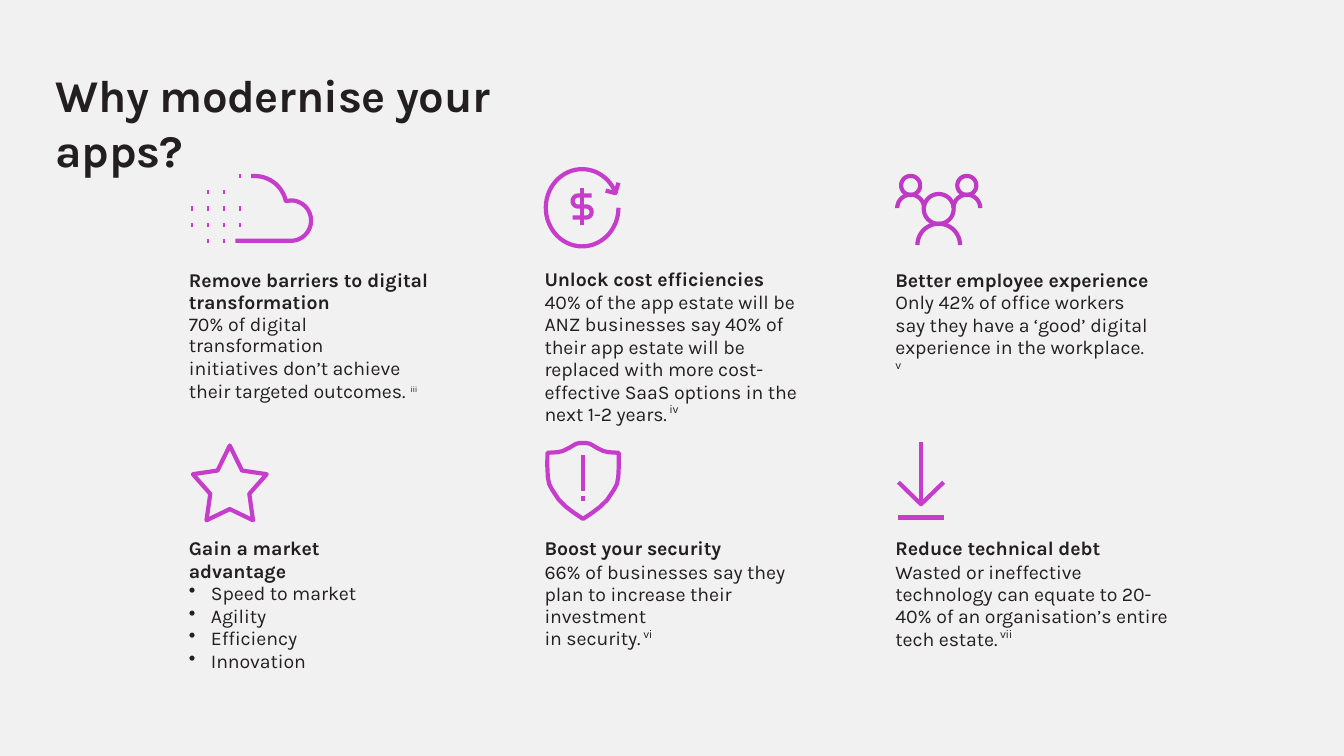
"""Build the slide on reasons to modernise apps."""
from dataclasses import dataclass
from math import cos, radians, sin

from lxml import etree
from pptx import Presentation
from pptx import util as u
from pptx.dml.color import RGBColor
from pptx.enum import shapes, text
from pptx.oxml import ns

Point = tuple[float, float]
Stroke = list[Point]


@dataclass(frozen=True)
class Theme:
    font: str = "Karla"
    ink: str = "231F20"
    paper: str = "F1F1F1"
    accent: str = "C63DCC"
    accent_deep: str = "BF3AC4"
    title_size: float = 53.5
    text_size: float = 23
    stroke: float = 4.95


@dataclass(frozen=True)
class Line:
    text: str
    leading: float = 26.4
    before: float = 0
    bold: bool = False
    bullet: bool = False
    note: str = ""
    note_size: float = 24


@dataclass(frozen=True)
class Card:
    column: int
    row: int
    width: float
    height: float
    lines: list[Line]
    inset: float = 0.7


@dataclass(frozen=True)
class Icon:
    strokes: list[Stroke]
    color: str
    closed: bool = False


THEME = Theme()
COLUMNS = (222.5, 641.5, 1054.8)
ROWS = (313.9, 631.4)
BULLET_INDENT = 26


def heading(words: str) -> Line:
    """Return a standard card heading."""
    return Line(words, 27, 1.1, bold=True)


CARDS = [
    Card(0, 0, 288.7, 135.4, [
        Line("Remove barriers to digital transformation", before=3, bold=True),
        Line("70% of digital transformation", 25.1),
        Line("initiatives don’t achieve their targeted outcomes. ", before=1.2, note="iii", note_size=18),
    ], inset=2.9),
    Card(1, 0, 321.9, 162, [
        heading("Unlock cost efficiencies"),
        Line("40% of the app estate will be ANZ businesses say 40% of their app estate will be replaced "
             "with more cost-effective SaaS options in the next 1-2 years.", before=1.3, note=" iv"),
    ]),
    Card(2, 0, 301, 108.7, [
        Line("Better employee experience", before=3, bold=True),
        Line("Only 42% of office workers say they have a ‘good’ digital experience in the workplace. ", note="v"),
    ], inset=2.9),
    Card(0, 1, 268.6, 135.4, [
        heading("Gain a market advantage"),
        *(Line(gain, bullet=True) for gain in ("Speed to market", "Agility", "Efficiency")),
        Line("Innovation", 27, bullet=True),
    ]),
    Card(1, 1, 311.8, 108.7, [
        heading("Boost your security"),
        Line("66% of businesses say they plan to increase their investment", before=1.3),
        Line("in security.", 25.7, note=" vi"),
    ]),
    Card(2, 1, 334.8, 108, [
        heading("Reduce technical debt"),
        Line("Wasted or ineffective technology can equate to 20-40% of an organisation’s entire tech estate.",
             before=1.3, note=" vii"),
    ]),
]


def arc(x: float, y: float, rx: float, ry: float, start: float, end: float) -> Stroke:
    """Return points along an elliptical arc, with angles running clockwise."""
    steps = max(12, round(abs(end - start) / 6))
    angles = [radians(start + (end - start) * i / steps) for i in range(steps + 1)]
    return [(x + rx * cos(a), y + ry * sin(a)) for a in angles]


def mirrored(axis: float, half: Stroke) -> Stroke:
    """Return a symmetric outline from the half to the right of its axis."""
    right = [(axis + x, y) for x, y in half]
    return right + [(axis - x, y) for x, y in half[-2:0:-1]]


CLOUD = [(277.2, 283.7), *arc(342.7, 259.9, 23.8, 23.8, 90, -90), (337.7, 236.9),
         *arc(300.2, 244.8, 37.4, 37.4, -12, -90), (295.9, 207.4)]
DOLLAR = [(674.6, 256.3), *arc(690.5, 249.8, 6.5, 6.5, 90, -90),
          *arc(681.1, 236.9, 6.5, 6.5, 90, 270), (697, 230.4)]
COIN = [[(685.4, 221), (685.4, 265)], DOLLAR, [(713.5, 224.6), (725, 227.5), (728.6, 215.3)],
        arc(685.8, 244.8, 42.8, 45.5, 0, 338)]
PEOPLE = [stroke for x, head_y, head, body_y, body in (
    (1072.8, 218.5, 11.2, 245.2, 15.8), (1139, 218.5, 11.2, 245.2, 15.8), (1105.9, 246.2, 17.6, 288.7, 25.1))
    for stroke in (arc(x, head_y, head, head, 0, 360), arc(x, body_y, body, body, 180, 360))]
STAR = mirrored(270.7, [(0, 524.9), (14.4, 554.4), (43.5, 558.7), (23, 581.8), (27.4, 613), (0, 599.8)])
SHIELD = mirrored(686.9, [
    (0, 522), (4, 522), (7.5, 522.7), (10.5, 524.2), (16.5, 527.8), (24, 531.4), (30, 532.8), (42, 533.5),
    (42.1, 549.4), (41.5, 562), (40, 570), (36.7, 576.5), (28.4, 589), (20.2, 597), (11, 604), (0, 611.3)])
DOWNLOAD = [[(1085, 594), (1085, 520.6)], [(1111.7, 568.1), (1085, 594), (1058.4, 568.1)]]
ICONS = [
    Icon([CLOUD], THEME.accent), Icon(COIN, THEME.accent), Icon(PEOPLE, THEME.accent_deep),
    Icon([STAR], THEME.accent, closed=True), Icon([SHIELD], THEME.accent, closed=True),
    Icon(DOWNLOAD, THEME.accent),
]
DOT_LENGTH = 2.6
DOT_ROWS = ((2, 3), (1, 2, 3, 4), (1, 2, 3, 4), (0, 2, 3))
DOTS = [(224.6 + 18.8 * column, 207.4 + 19.1 * row) for column, rows in enumerate(DOT_ROWS) for row in rows]
RULES = [((x, y), (x + DOT_LENGTH, y)) for x, y in DOTS] + [
    ((686.9, 536.4), (686.9, 578.2)), ((686.9, 584.6), (686.9, 589.7)), ((1058.4, 609.8), (1111.7, 609.8))]


def style_line(line, color: str) -> None:
    """Apply the icon stroke."""
    line.color.rgb = RGBColor.from_string(color)
    line.width = u.Pt(THEME.stroke)


def draw_icon(page, icon: Icon) -> None:
    """Draw the strokes of an icon as one outline."""
    first, *others = [[(u.Pt(x), u.Pt(y)) for x, y in stroke] for stroke in icon.strokes]
    builder = page.shapes.build_freeform(*first[0])
    builder.add_line_segments(first[1:], close=icon.closed)
    for stroke in others:
        builder.move_to(*stroke[0])
        builder.add_line_segments(stroke[1:], close=False)
    shape = builder.convert_to_shape()
    shape.shadow.inherit = False
    shape.fill.background()
    style_line(shape.line, icon.color)


def draw_rule(page, start: Point, end: Point) -> None:
    """Draw a straight icon stroke."""
    ends = [u.Pt(value) for value in (*start, *end)]
    rule = page.shapes.add_connector(shapes.MSO_CONNECTOR.STRAIGHT, *ends)
    style_line(rule.line, THEME.accent)
    etree.SubElement(rule._element.spPr, ns.qn("a:effectLst"))


def style_span(span, size: float, bold: bool, tracking: float, baseline: int = 0) -> None:
    """Format a run, with its tracking in points and its baseline in percent."""
    span.font.name, span.font.size, span.font.bold = THEME.font, u.Pt(size), bold
    span.font.color.rgb = RGBColor.from_string(THEME.ink)
    properties = span._r.get_or_add_rPr()
    properties.set("spc", str(round(tracking * 100)))
    if baseline:
        properties.set("baseline", str(baseline * 1000))


def prepare_frame(frame, inset: float) -> None:
    """Set wrapping, anchor and margins."""
    frame.word_wrap = True
    frame.auto_size = text.MSO_AUTO_SIZE.NONE
    frame.vertical_anchor = text.MSO_ANCHOR.TOP
    frame.margin_left = frame.margin_right = frame.margin_bottom = 0
    frame.margin_top = u.Pt(inset)


def write_line(para, line: Line) -> None:
    """Write and format one paragraph of a card."""
    para.text = line.text
    para.line_spacing, para.space_before = u.Pt(line.leading), u.Pt(line.before)
    style_span(para.runs[0], THEME.text_size, line.bold, -0.1)
    if line.note:
        span = para.add_run()
        span.text = line.note
        style_span(span, line.note_size, False, -0.4, 37)
    if line.bullet:
        properties = para._p.get_or_add_pPr()
        properties.set("marL", str(u.Pt(BULLET_INDENT)))
        properties.set("indent", str(-u.Pt(BULLET_INDENT)))
        etree.SubElement(properties, ns.qn("a:buChar")).set("char", "•")


def draw_card(page, card: Card) -> None:
    """Draw the text of a card."""
    place = [u.Pt(value) for value in (COLUMNS[card.column], ROWS[card.row], card.width, card.height)]
    frame = page.shapes.add_textbox(*place).text_frame
    prepare_frame(frame, card.inset)
    for index, line in enumerate(card.lines):
        write_line(frame.add_paragraph() if index else frame.paragraphs[0], line)


def draw_title(page) -> None:
    """Place and format the title."""
    box = page.shapes.title
    box.left, box.top, box.width, box.height = (u.Pt(value) for value in (65.5, 77.8, 671.8, 66.2))
    box.text_frame.text = "Why modernise your apps?"
    prepare_frame(box.text_frame, 1.4)
    para = box.text_frame.paragraphs[0]
    para.alignment, para.space_before = text.PP_ALIGN.LEFT, u.Pt(1.1)
    style_span(para.runs[0], THEME.title_size, True, -0.5)


def main() -> None:
    """Build and save the deck."""
    deck = Presentation()
    deck.slide_width, deck.slide_height = u.Pt(1583.28), u.Pt(890.64)
    page = deck.slides.add_slide(deck.slide_layouts.get_by_name("Title Only"))
    page.background.fill.solid()
    page.background.fill.fore_color.rgb = RGBColor.from_string(THEME.paper)
    draw_title(page)
    for card in CARDS:
        draw_card(page, card)
    for icon in ICONS:
        draw_icon(page, icon)
    for start, end in RULES:
        draw_rule(page, start, end)
    deck.save("out.pptx")


if __name__ == "__main__":
    main()
